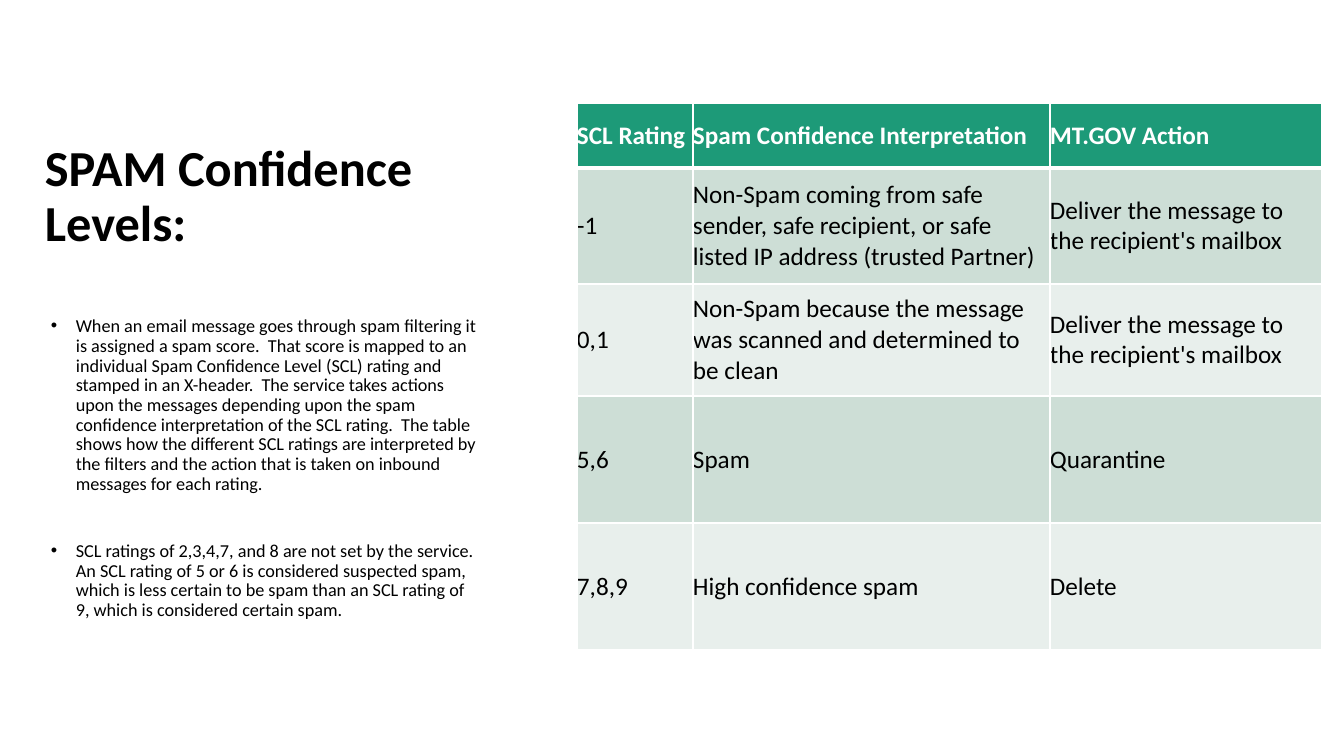
import pptx
import pptx.util
import pptx.dml.color
import pptx.enum.text
import pptx.oxml.ns
import lxml.etree

TITLE = "SPAM Confidence Levels:"
NOTES = [
    ("When an email message goes through spam filtering it is assigned a spam score.  "
     "That score is mapped to an individual Spam Confidence Level (SCL) rating and "
     "stamped in an X-header.  The service takes actions upon the messages depending "
     "upon the spam confidence interpretation of the SCL rating.  The table shows how "
     "the different SCL ratings are interpreted by the filters and the action that is "
     "taken on inbound messages for each rating.", 10),
    ("SCL ratings of 2,3,4,7, and 8 are not set by the service.  An SCL rating of 5 or "
     "6 is considered suspected spam, which is less certain to be spam than an SCL "
     "rating of 9, which is considered certain spam.", 34),
]
ROWS = [
    ("SCL Rating", "Spam Confidence Interpretation", "MT.GOV Action"),
    ("-1", "Non-Spam coming from safe sender, safe recipient, or safe listed IP address "
     "(trusted Partner)", "Deliver the message to the recipient's mailbox"),
    ("0,1", "Non-Spam because the message was scanned and determined to be clean",
     "Deliver the message to the recipient's mailbox"),
    ("5,6", "Spam", "Quarantine"),
    ("7,8,9", "High confidence spam", "Delete"),
]
WIDTHS = (116, 357, 272)
HEIGHTS = (65, 116, 112, 127, 127)

RGB = pptx.dml.color.RGBColor
BLACK = RGB(0x00, 0x00, 0x00)
WHITE = RGB(0xFF, 0xFF, 0xFF)
GREEN = RGB(0x1D, 0x9A, 0x78)
BANDS = (RGB(0xCD, 0xDE, 0xD6), RGB(0xE8, 0xEF, 0xEC))
MIDDLE = pptx.enum.text.MSO_ANCHOR.MIDDLE


def px(n):
    return pptx.util.Emu(round(n * 914400 / 100.8))


def write(par, text, size=18, color=BLACK, bold=False, line=None, before=0, bullet=False):
    run = par.add_run()
    run.text = text
    run.font.name = "Calibri"
    run.font.size = pptx.util.Pt(size)
    run.font.bold = bold
    run.font.color.rgb = color
    par.space_before = pptx.util.Pt(before)
    if line:
        par.line_spacing = line
    if bullet:
        props = par._p.get_or_add_pPr()
        props.set("marL", str(px(31)))
        props.set("indent", str(px(-25)))
        font = lxml.etree.SubElement(props, pptx.oxml.ns.qn("a:buFont"))
        font.set("typeface", "Arial")
        mark = lxml.etree.SubElement(props, pptx.oxml.ns.qn("a:buChar"))
        mark.set("char", "•")


def add_box(slide, left, top, width, height):
    frame = slide.shapes.add_textbox(px(left), px(top), px(width), px(height)).text_frame
    frame.word_wrap = True
    return frame


def add_edges(cell, base):
    props = cell._tc.get_or_add_tcPr()
    for spot, (side, size) in enumerate((("L", 1), ("R", 1), ("T", 1), ("B", base))):
        edge = lxml.etree.Element(pptx.oxml.ns.qn("a:ln" + side))
        edge.set("w", str(pptx.util.Pt(size)))
        fill = lxml.etree.SubElement(edge, pptx.oxml.ns.qn("a:solidFill"))
        lxml.etree.SubElement(fill, pptx.oxml.ns.qn("a:srgbClr")).set("val", str(WHITE))
        props.insert(spot, edge)


def add_grid(slide, left, top):
    grid = slide.shapes.add_table(len(ROWS), len(WIDTHS), px(left), px(top),
                                  px(sum(WIDTHS)), px(sum(HEIGHTS))).table
    for col, width in zip(grid.columns, WIDTHS):
        col.width = px(width)
    for r, (row, height) in enumerate(zip(ROWS, HEIGHTS)):
        grid.rows[r].height = px(height)
        head = r == 0
        for c, text in enumerate(row):
            cell = grid.cell(r, c)
            cell.margin_left = cell.margin_right = cell.margin_top = cell.margin_bottom = 0
            cell.vertical_anchor = MIDDLE
            cell.fill.solid()
            cell.fill.fore_color.rgb = GREEN if head else BANDS[(r - 1) % 2]
            add_edges(cell, 3 if head else 1)
            write(cell.text_frame.paragraphs[0], text,
                  color=WHITE if head else BLACK, bold=head)


def main():
    deck = pptx.Presentation()
    deck.slide_width, deck.slide_height = px(1344), px(756)
    slide = deck.slides.add_slide(deck.slide_layouts[6])

    title = add_box(slide, 35, 108, 452, 179)
    title.vertical_anchor = MIDDLE
    write(title.paragraphs[0], TITLE, size=36, bold=True, line=0.9)

    body = add_box(slide, 35, 312, 452, 336)
    for i, (text, gap) in enumerate(NOTES):
        par = body.add_paragraph() if i else body.paragraphs[0]
        write(par, text, size=13, line=0.9, before=gap, bullet=True)

    add_grid(slide, 577, 103)
    deck.save("out.pptx")


if __name__ == "__main__":
    main()
